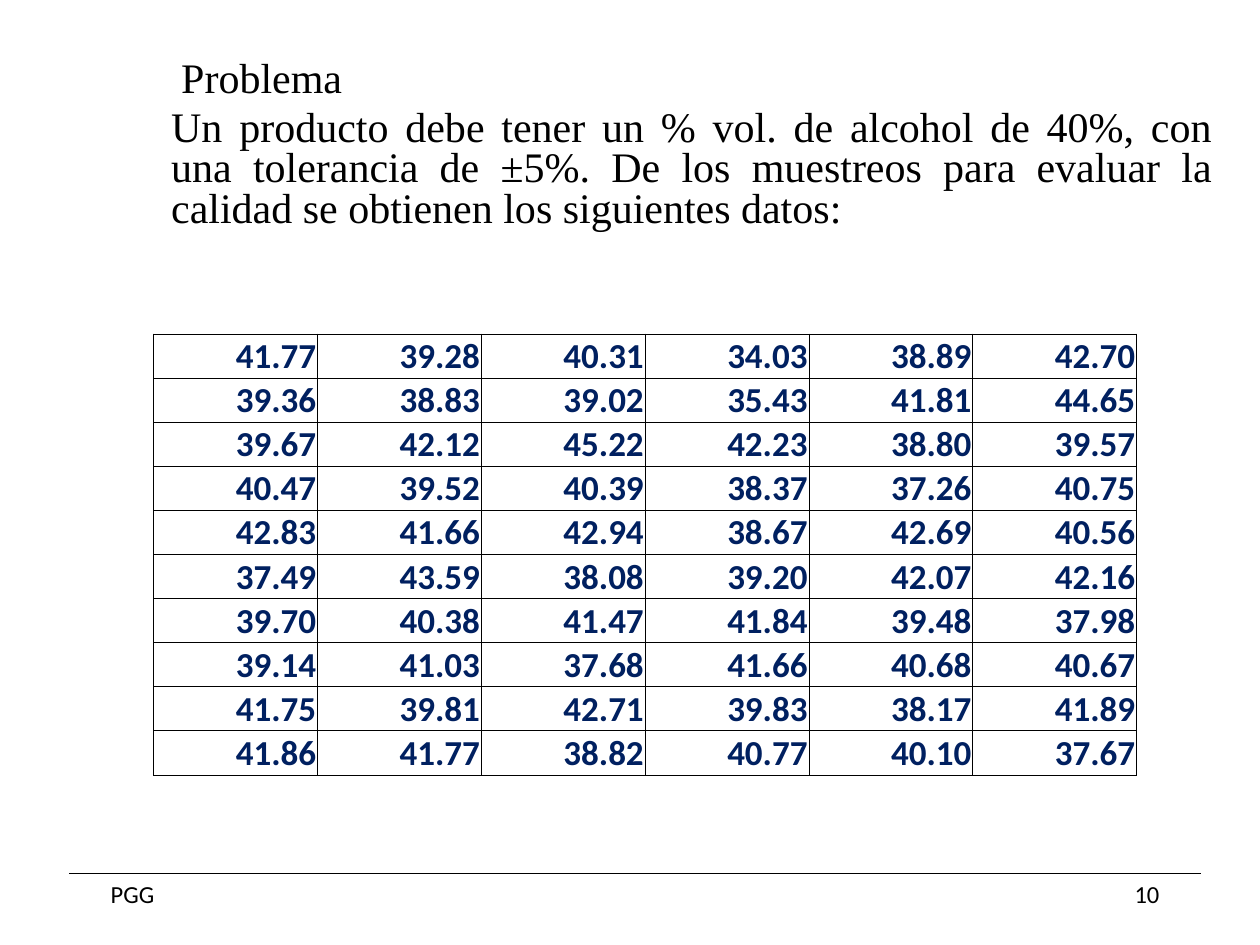
from lxml import etree
from pptx import Presentation, util as u
from pptx.dml.color import RGBColor
from pptx.enum import shapes, text
from pptx.oxml.ns import qn

# Content
STATEMENT = [
    # wording, alignment, left indent in inches
    ("Problema", text.PP_ALIGN.LEFT, 0.75),
    ("Un producto debe tener un % vol. de alcohol de 40%, con una tolerancia "
     "de ±5%. De los muestreos para evaluar la calidad se obtienen los "
     "siguientes datos:", text.PP_ALIGN.JUSTIFY, 0.67),
]
SAMPLES = [
    (41.77, 39.28, 40.31, 34.03, 38.89, 42.70),
    (39.36, 38.83, 39.02, 35.43, 41.81, 44.65),
    (39.67, 42.12, 45.22, 42.23, 38.80, 39.57),
    (40.47, 39.52, 40.39, 38.37, 37.26, 40.75),
    (42.83, 41.66, 42.94, 38.67, 42.69, 40.56),
    (37.49, 43.59, 38.08, 39.20, 42.07, 42.16),
    (39.70, 40.38, 41.47, 41.84, 39.48, 37.98),
    (39.14, 41.03, 37.68, 41.66, 40.68, 40.67),
    (41.75, 39.81, 42.71, 39.83, 38.17, 41.89),
    (41.86, 41.77, 38.82, 40.77, 40.10, 37.67),
]
FOOTER = [
    # wording, left edge in inches, alignment
    ("PGG", 0.78, text.PP_ALIGN.LEFT),
    ("10", 7.11, text.PP_ALIGN.RIGHT),
]
FOOTER_TOP = 6.93

THEME = {
    "statement": {"name": "Times New Roman", "size": 24, "color": "000000", "bold": False},
    "sample": {"name": "Calibri", "size": 20, "color": "002060", "bold": True},
    "footer": {"name": "Calibri", "size": 14, "color": "000000", "bold": False},
    "rule": "000000",
}


def style(para, role, align):
    look = THEME[role]
    para.alignment = align
    para.font.name = look["name"]
    para.font.size = u.Pt(look["size"])
    para.font.bold = look["bold"]
    para.font.color.rgb = RGBColor.from_string(look["color"])


def add_box(page, left, top, width, height):
    box = page.shapes.add_textbox(*map(u.Inches, (left, top, width, height)))
    box.text_frame.word_wrap = True
    return box.text_frame


def add_borders(cell):
    props = cell._tc.get_or_add_tcPr()
    for position, side in enumerate(("a:lnL", "a:lnR", "a:lnT", "a:lnB")):
        line = etree.Element(qn(side), w=str(u.Pt(0.5)))
        fill = etree.SubElement(line, qn("a:solidFill"))
        etree.SubElement(fill, qn("a:srgbClr"), val=THEME["rule"])
        props.insert(position, line)


def add_footer(page):
    for wording, left, align in FOOTER:
        para = add_box(page, left, FOOTER_TOP, 2.19, 0.34).paragraphs[0]
        para.text = wording
        style(para, "footer", align)
    rule = page.shapes.add_connector(
        shapes.MSO_CONNECTOR.STRAIGHT, u.Inches(0.55), u.Inches(FOOTER_TOP),
        u.Inches(9.53), u.Inches(FOOTER_TOP))
    rule.line.color.rgb = RGBColor.from_string(THEME["rule"])
    rule.line.width = u.Pt(0.75)
    etree.SubElement(rule._element.spPr, qn("a:effectLst"))


def add_statement(page):
    frame = add_box(page, 0.59, 0.44, 9.13, 6.77)
    for index, (wording, align, indent) in enumerate(STATEMENT):
        para = frame.add_paragraph() if index else frame.paragraphs[0]
        para.text = wording
        style(para, "statement", align)
        para.line_spacing = 0.8
        para.space_before = u.Pt(4.8)
        para._p.get_or_add_pPr().set("marL", str(u.Inches(indent)))


def add_samples(page):
    rows, columns = len(SAMPLES), len(SAMPLES[0])
    table = page.shapes.add_table(
        rows, columns, u.Inches(1.22), u.Inches(2.65),
        u.Inches(1.3 * columns), u.Inches(0.35 * rows)).table
    table.first_row = table.horz_banding = False
    for row, values in zip(table.rows, SAMPLES):
        row.height = u.Inches(0.35)
        for cell, value in zip(row.cells, values):
            cell.fill.background()
            add_borders(cell)
            cell.margin_left = cell.margin_right = cell.margin_top = u.Inches(0.01)
            cell.margin_bottom = 0
            cell.vertical_anchor = text.MSO_ANCHOR.BOTTOM
            para = cell.text_frame.paragraphs[0]
            para.text = f"{value:.2f}"
            style(para, "sample", text.PP_ALIGN.RIGHT)


def main():
    deck = Presentation()
    deck.slide_width, deck.slide_height = u.Inches(10), u.Inches(7.5)
    page = deck.slides.add_slide(deck.slide_layouts[6])
    add_footer(page)
    add_statement(page)
    add_samples(page)
    deck.save("out.pptx")


if __name__ == "__main__":
    main()
